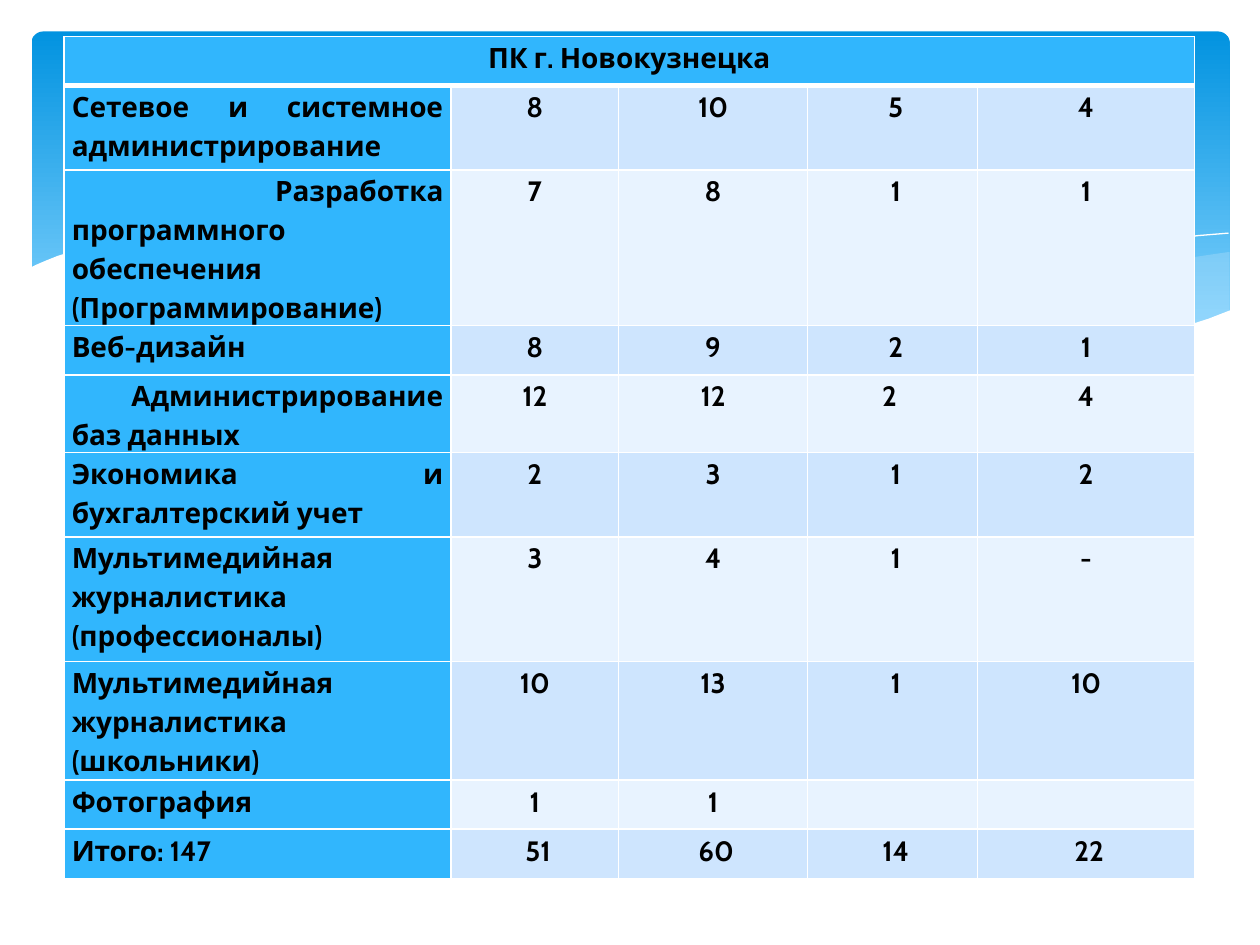
from dataclasses import dataclass

import pptx
import pptx.dml.color
import pptx.enum.shapes
import pptx.enum.text
import pptx.oxml
import pptx.oxml.ns
import pptx.util
from lxml import etree

ALIGN = pptx.enum.text.PP_ALIGN
COLORS = {
    "sky": "0293E0",
    "horizon": "83D3FE",
    "mist": "C6E7FC",
    "white": "FFFFFF",
    "label": "31B6FD",
    "band": "CEE5FE",
    "pale": "E8F3FF",
    "text": "000000",
}
FONT = "Cabin"
GRID_COLUMNS = 100
SLIDE_WIDTH = pptx.util.Inches(10)
SLIDE_HEIGHT = pptx.util.Inches(7.5)
UNIT = SLIDE_WIDTH // GRID_COLUMNS


@dataclass
class Wave:
    points: list[tuple[float, float]]
    fill: str | None = None
    opacity: int = 100


@dataclass
class Competence:
    name: str
    values: tuple[str, ...]
    height: float
    alignment: ALIGN = ALIGN.JUSTIFY


WAVES = [
    Wave([(97.5, 20), (94.8, 20.4), (92.1, 21), (89.1, 21.6), (86.1, 22.3), (80.5, 23.7),
          (75.3, 24.8), (70.6, 25.7), (66.1, 26.5), (69.1, 26.9), (71.9, 27.2), (74.5, 27.5),
          (78.1, 27.7), (81.4, 27.8), (85.4, 27.6), (88.1, 27.3), (90.5, 26.9), (92.8, 26.3),
          (94.9, 25.7), (96.3, 25.2), (97.6, 24.7), (97.6, 20)], "mist", 29),
    Wave([(89.3, 27.3), (86.6, 26.9), (83.7, 26.5), (80.7, 26), (77.5, 25.4), (74.1, 24.7),
          (66.8, 23.1), (62.9, 22.2), (58.4, 21.1), (54.1, 20.3), (50.2, 19.6), (46.5, 19.1),
          (42, 18.7), (38, 18.5), (34.4, 18.6), (31.3, 18.8), (28.6, 19.1), (32.3, 19.6),
          (36.2, 20.3), (40.4, 21.1), (44.9, 22.2), (53, 24), (60.1, 25.5), (65, 26.4),
          (69.5, 27), (73.6, 27.5), (77.3, 27.7), (80.7, 27.8), (84.8, 27.7)], "mist", 40),
    Wave([(30.9, 19.5), (34.4, 19), (38.7, 18.7), (43.3, 18.7), (48.9, 19), (53.3, 19.4),
          (58.2, 20), (63.6, 20.8), (69.5, 21.9), (76, 23.3), (83.1, 25.1), (90.7, 27.2)]),
    Wave([(61.3, 25.7), (65.3, 24.6), (69.5, 23.5), (74.8, 22.3), (80.6, 21), (86.6, 19.9),
          (91, 19.2), (95.1, 18.7), (97.5, 18.5)]),
    Wave([(97.7, 24.6), (95.9, 25.3), (94, 25.9), (92, 26.5), (89.9, 26.9), (87.5, 27.3),
          (83.7, 27.6), (80.9, 27.7), (76.1, 27.5), (70.8, 27), (64.8, 26.2), (57.9, 25),
          (50.3, 23.3), (44.7, 22), (39.1, 20.7), (34, 19.7), (29.2, 19), (25, 18.6),
          (21.1, 18.4), (17.7, 18.4), (14.6, 18.5), (11.9, 18.7), (9.5, 19.1), (7.6, 19.5),
          (5.9, 19.9), (4.6, 20.3), (3.6, 20.7), (2.9, 21), (2.3, 21.3), (2.3, 32.9),
          (97.7, 32.9)], "white"),
]

HEADING = "ПК г. Новокузнецка"
HEADING_HEIGHT = 3.9
COLUMN_WIDTHS = (30.7, 13.3, 15, 13.5, 17.2)
COMPETENCES = [
    Competence("Сетевое и системное администрирование", ("8", "10", " 5", "4"), 6.7),
    Competence(" Разработка программного обеспечения (Программирование)",
               ("7", "8", " 1", "1"), 10.1),
    Competence("Веб-дизайн", ("8", "9", " 2", "1"), 3.9),
    Competence(" Администрирование баз данных", ("12", "12", "2 ", "4"), 6.1),
    Competence("Экономика и бухгалтерский учет", ("2", "3", " 1", "2"), 6.7),
    Competence("Мультимедийная журналистика (профессионалы)",
               ("3", "4", " 1", "-"), 9.9, ALIGN.LEFT),
    Competence("Мультимедийная журналистика (школьники)",
               ("10", "13", " 1", "10"), 9.4, ALIGN.LEFT),
    Competence("Фотография", ("1", "1", "", ""), 3.9, ALIGN.LEFT),
    Competence("Итого: 147", (" 51", " 60", " 14", " 22"), 3.9, ALIGN.LEFT),
]


def grid(units: float) -> int:
    return round(units * UNIT)


def color(name: str) -> pptx.dml.color.RGBColor:
    return pptx.dml.color.RGBColor.from_string(COLORS[name])


def draw_sky(slide) -> None:
    shape = slide.shapes.add_shape(
        pptx.enum.shapes.MSO_SHAPE.ROUNDED_RECTANGLE,
        grid(2.5), grid(2.5), grid(95.1), grid(27))
    shape.adjustments[0] = 0.034
    shape.shadow.inherit = False
    shape.line.fill.background()
    shape.fill.gradient()
    shape.fill.gradient_angle = 270
    for stop, name, position in zip(shape.fill.gradient_stops, ("sky", "horizon"), (0, 0.9)):
        stop.color.rgb = color(name)
        stop.position = position


def draw_wave(slide, wave: Wave) -> None:
    points = [(grid(x), grid(y)) for x, y in wave.points]
    builder = slide.shapes.build_freeform(*points[0], scale=1.0)
    builder.add_line_segments(points[1:], close=wave.fill is not None)
    shape = builder.convert_to_shape()
    shape.shadow.inherit = False
    if wave.fill is None:
        shape.fill.background()
        shape.line.color.rgb = color("white")
        shape.line.width = pptx.util.Pt(0)
        return
    shape.line.fill.background()
    shape.fill.solid()
    shape.fill.fore_color.rgb = color(wave.fill)
    if wave.opacity < 100:
        tint = shape.fill._xPr.find(".//" + pptx.oxml.ns.qn("a:srgbClr"))
        alpha = etree.SubElement(tint, pptx.oxml.ns.qn("a:alpha"))
        alpha.set("val", str(wave.opacity * 1000))


def set_borders(cell, top: int = 1, bottom: int = 1) -> None:
    properties = cell._tc.get_or_add_tcPr()
    for index, (side, width) in enumerate((("L", 1), ("R", 1), ("T", top), ("B", bottom))):
        properties.insert(index, pptx.oxml.parse_xml(
            f'<a:ln{side} {pptx.oxml.ns.nsdecls("a")} w="{pptx.util.Pt(width)}"><a:solidFill>'
            f'<a:srgbClr val="{COLORS["white"]}"/></a:solidFill></a:ln{side}>'))


def fill_cell(cell, text: str, fill: str, alignment: ALIGN = ALIGN.CENTER,
              space_after: int = 0) -> None:
    cell.margin_left = cell.margin_right = grid(0.6)
    cell.margin_top = cell.margin_bottom = 0
    cell.fill.solid()
    cell.fill.fore_color.rgb = color(fill)
    if not text:
        return
    paragraph = cell.text_frame.paragraphs[0]
    paragraph.alignment = alignment
    paragraph.line_spacing = 1.15
    paragraph.space_after = pptx.util.Pt(space_after)
    run = paragraph.add_run()
    run.text = text
    run.font.name = FONT
    run.font.size = pptx.util.Pt(16)
    run.font.bold = True
    run.font.color.rgb = color("text")


def draw_table(slide) -> None:
    heights = [HEADING_HEIGHT] + [competence.height for competence in COMPETENCES]
    table = slide.shapes.add_table(
        len(heights), len(COLUMN_WIDTHS), grid(5.1), grid(2.9),
        grid(sum(COLUMN_WIDTHS)), grid(sum(heights))).table
    for column, width in zip(table.columns, COLUMN_WIDTHS):
        column.width = grid(width)
    for row, height in zip(table.rows, heights):
        row.height = grid(height)

    table.cell(0, 0).merge(table.cell(0, len(COLUMN_WIDTHS) - 1))
    fill_cell(table.cell(0, 0), HEADING, "label")
    for cell in table.rows[0].cells:
        set_borders(cell, bottom=3)
    for row, competence in enumerate(COMPETENCES, start=1):
        fill_cell(table.cell(row, 0), competence.name, "label", competence.alignment, 10)
        for column, value in enumerate(competence.values, start=1):
            fill_cell(table.cell(row, column), value, "band" if row % 2 else "pale")
        for cell in table.rows[row].cells:
            set_borders(cell, top=3 if row == 1 else 1)


def main() -> None:
    presentation = pptx.Presentation()
    presentation.slide_width = SLIDE_WIDTH
    presentation.slide_height = SLIDE_HEIGHT
    slide = presentation.slides.add_slide(presentation.slide_layouts[6])
    draw_sky(slide)
    for wave in WAVES:
        draw_wave(slide, wave)
    draw_table(slide)
    presentation.save("out.pptx")


if __name__ == "__main__":
    main()
